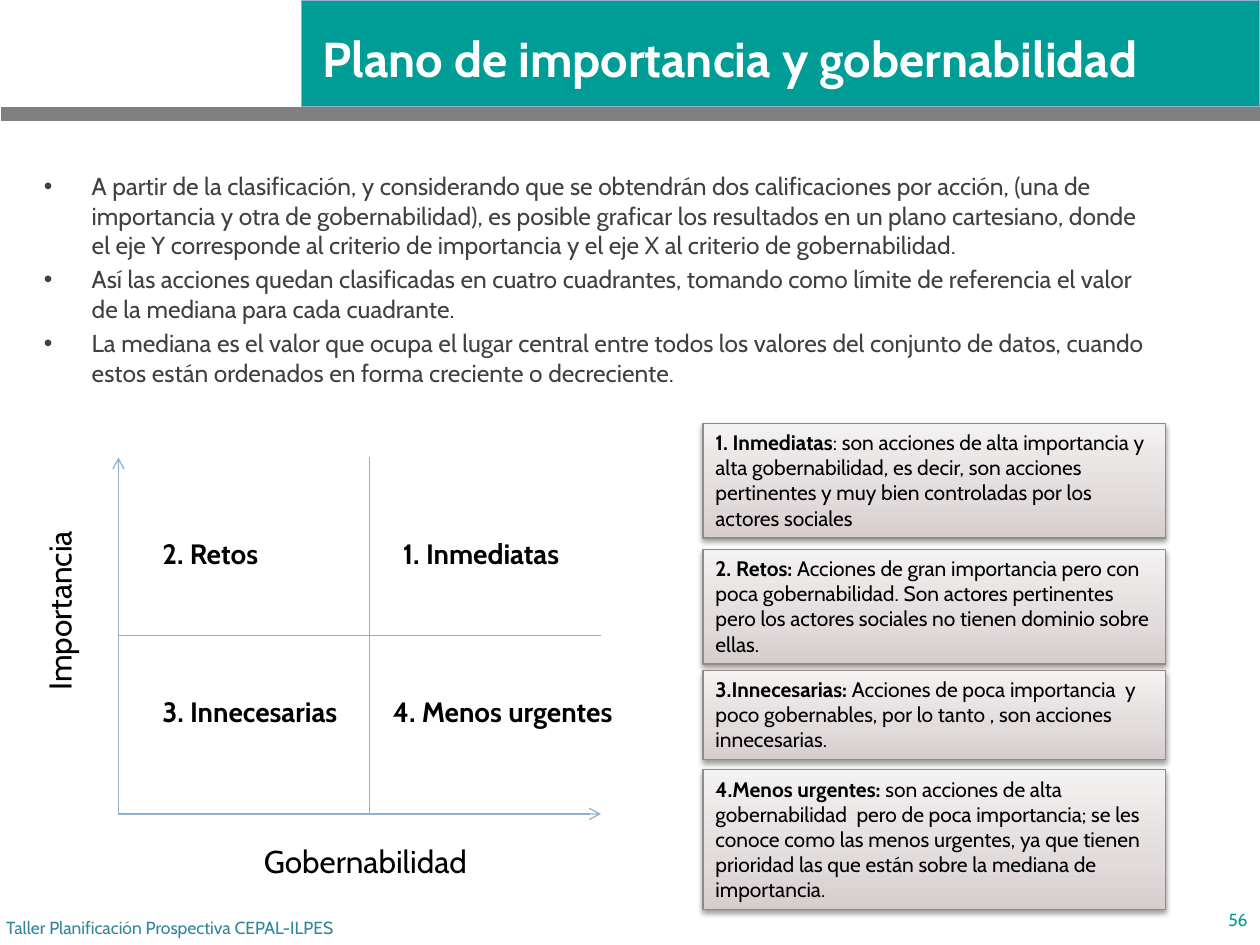
import pptx
import pptx.dml.color
import pptx.enum.shapes
import pptx.enum.text
import pptx.oxml
import pptx.oxml.ns
import pptx.util

COLUMNS, ROWS = 100, 75
TEAL, GREY, AXIS, BORDER = "009D96", "808080", "8FB2CF", "938989"
BLACK, WHITE, BODY, FOOTER = "000000", "FFFFFF", "404040", "31859C"
CARD_STOPS = [(0, "D6CDCD"), (35, "E2DBDB"), (100, "F4F1F1")]
ALIGN = pptx.enum.text.PP_ALIGN
MIDDLE = pptx.enum.text.MSO_ANCHOR.MIDDLE
RECTANGLE = pptx.enum.shapes.MSO_SHAPE.RECTANGLE
STRAIGHT = pptx.enum.shapes.MSO_CONNECTOR.STRAIGHT

presentation = pptx.Presentation()
presentation.slide_width = pptx.util.Inches(10)
presentation.slide_height = pptx.util.Inches(7.5)

BULLETS = [
    "A partir de la clasificación, y considerando que se obtendrán dos calificaciones por acción, "
    "(una de importancia y otra de gobernabilidad), es posible graficar los resultados en un plano "
    "cartesiano, donde el eje Y corresponde al criterio de importancia y el eje X al criterio de "
    "gobernabilidad.",
    "Así las acciones quedan clasificadas en cuatro cuadrantes, tomando como límite de referencia "
    "el valor de la mediana para cada cuadrante.",
    "La mediana es el valor que ocupa el lugar central entre todos los valores del conjunto de "
    "datos, cuando estos están ordenados en forma creciente o decreciente.",
]
QUADRANTS = [
    ("1. Inmediatas", 21.6, 5.8, 15),
    ("2. Retos", 2.5, 5.8, 11.7),
    ("3. Innecesarias", 2.5, 18.3, 16.7),
    ("4. Menos urgentes", 20.8, 18.3, 20),
]
CARDS = [
    (0, 4, "1. Inmediatas", ": son acciones de alta importancia y alta gobernabilidad, es decir, "
     "son acciones pertinentes y muy bien controladas por los actores sociales"),
    (10, 4, "2. Retos: ", "Acciones de gran importancia pero con poca gobernabilidad. Son actores "
     "pertinentes pero los actores sociales no tienen dominio sobre ellas."),
    (19.6, 3, "3.Innecesarias: ", "Acciones de poca importancia  y poco gobernables, por lo tanto , "
     "son acciones innecesarias."),
    (27.5, 5, "4.Menos urgentes: ", "son acciones de alta gobernabilidad  pero de poca importancia; "
     "se les conoce como las menos urgentes, ya que tienen prioridad las que están sobre la mediana "
     "de importancia."),
]


def place(left, top, width, height):
    """Turn a box in grid columns and rows into slide lengths."""
    column, row = presentation.slide_width / COLUMNS, presentation.slide_height / ROWS
    return [int(n) for n in (left * column, top * row, width * column, height * row)]


def color(value):
    """Turn a hex string into a colour."""
    return pptx.dml.color.RGBColor.from_string(value)


def xml(markup):
    """Build a drawing element from markup whose root has a %s for the namespace."""
    return pptx.oxml.parse_xml(markup % pptx.oxml.ns.nsdecls("a"))


def style(paragraph, size, ink, bold=False):
    """Format every run of a paragraph."""
    for run in paragraph.runs:
        run.font.name, run.font.size, run.font.bold = "Cabin", pptx.util.Pt(size), bold
        run.font.color.rgb = color(ink)


def add_text(slide, box, words, size, ink, bold=False, align=ALIGN.LEFT, anchor=None, wrap=True):
    """Add a one-paragraph text box and return its frame."""
    frame = slide.shapes.add_textbox(*place(*box)).text_frame
    frame.word_wrap, frame.text = wrap, words
    if anchor is not None:
        frame.vertical_anchor = anchor
    frame.paragraphs[0].alignment = align
    style(frame.paragraphs[0], size, ink, bold)
    return frame


def add_rectangle(slide, box, border=None):
    """Add a rectangle without shadow, with a thin border if one is given."""
    rectangle = slide.shapes.add_shape(RECTANGLE, *place(*box))
    rectangle.shadow.inherit = False
    if border:
        rectangle.line.color.rgb, rectangle.line.width = color(border), pptx.util.Pt(0.75)
    else:
        rectangle.line.fill.background()
    return rectangle


def add_header(slide, box):
    """Draw the title banner, the grey rule under it and the title."""
    left, top, width, height = box
    banner = add_rectangle(slide, (left + 23.9, top, width - 23.9, 8.5), AXIS)
    rule = add_rectangle(slide, (left + 0.1, top + 8.5, width, height - 8.5))
    for band, fill in ((banner, TEAL), (rule, GREY)):
        band.fill.solid()
        band.fill.fore_color.rgb = color(fill)
    title = slide.shapes.title
    title.left, title.top, title.width, title.height = place(left + 24.6, top - 0.4, 74.1, 10)
    frame = title.text_frame
    frame.text = "Plano de importancia y gobernabilidad"
    frame.auto_size = pptx.enum.text.MSO_AUTO_SIZE.NONE
    frame.vertical_anchor = MIDDLE
    frame.paragraphs[0].alignment = ALIGN.LEFT
    style(frame.paragraphs[0], 28, WHITE, True)
    slide.shapes._spTree.append(title._element)


def add_bullets(slide, box):
    """Write the bulleted explanation."""
    frame = slide.shapes.add_textbox(*place(*box)).text_frame
    frame.word_wrap, frame.text = True, "\n".join(BULLETS)
    indent = pptx.util.Inches(0.38)
    for index, paragraph in enumerate(frame.paragraphs):
        properties = paragraph._p.get_or_add_pPr()
        properties.set("marL", str(indent))
        properties.set("indent", str(-indent))
        properties.append(xml('<a:buFont %s typeface="Arial"/>'))
        properties.append(xml('<a:buChar %s char="•"/>'))
        paragraph.space_before = pptx.util.Pt(2.8 if index else 0)
        style(paragraph, 14, BODY)


def add_plane(slide, box):
    """Draw the axes, the median lines, the quadrant names and the axis names."""
    left, top, width, height = box
    right, bottom = left + width, top + height
    median_x, median_y = left + 0.52 * width, top + 0.5 * height
    lines = [
        (left, bottom, right, bottom, True),
        (left, bottom, left, top, True),
        (median_x, bottom, median_x, top, False),
        (left, median_y, right, median_y, False),
    ]
    axes = slide.shapes.add_group_shape()
    for *ends, arrow in lines:
        line = axes.shapes.add_connector(STRAIGHT, *place(*ends))
        line.line.color.rgb, line.line.width = color(AXIS), pptx.util.Pt(0.75)
        if arrow:
            line.line._get_or_add_ln().append(xml('<a:tailEnd %s type="arrow"/>'))
        line._element.spPr.append(xml("<a:effectLst %s/>"))
    for name, across, down, span in QUADRANTS:
        add_text(slide, (left + across, top + down, span, 3.7), name, 16, BLACK, True, wrap=False)
    vertical = add_text(slide, (left - 6.7, top + 3.3, 5, 16.2), "Importancia", 18, BLACK)
    vertical._txBody.bodyPr.set("vert", "vert270")
    add_text(slide, (left + 5, bottom + 1.7, 29.2, 4), "Gobernabilidad", 18, BLACK, align=ALIGN.CENTER)


def add_cards(slide, box):
    """Stack the shaded definitions, each as tall as its number of lines."""
    left, top, width, _ = box
    stops = "".join(f'<a:gs pos="{share * 1000}"><a:srgbClr val="{tint}"/></a:gs>'
                    for share, tint in CARD_STOPS)
    gradient = f'<a:gradFill %s><a:gsLst>{stops}</a:gsLst><a:lin ang="16200000" scaled="1"/></a:gradFill>'
    shadow = ('<a:outerShdw %s blurRad="39400" dist="20300" dir="5400000" rotWithShape="0">'
              '<a:srgbClr val="000000"><a:alpha val="38000"/></a:srgbClr></a:outerShdw>')
    for down, line_count, term, meaning in CARDS:
        card = add_rectangle(slide, (left, top + down, width, 2 * line_count + 1.1), BORDER)
        properties = card._element.spPr
        properties.find(pptx.oxml.ns.qn("a:prstGeom")).addnext(xml(gradient))
        properties.find(pptx.oxml.ns.qn("a:effectLst")).append(xml(shadow))
        frame = card.text_frame
        frame.word_wrap, frame.vertical_anchor = True, pptx.enum.text.MSO_ANCHOR.TOP
        paragraph = frame.paragraphs[0]
        paragraph.alignment = ALIGN.LEFT
        for words in (term, meaning):
            paragraph.add_run().text = words
        style(paragraph, 12, BLACK)
        paragraph.runs[0].font.bold = True


def add_footer(slide, box):
    """Write the workshop name and the page number."""
    left, top, width, height = box
    add_text(slide, (left - 0.5, top + 0.6, 59.8, height), "Taller Planificación Prospectiva CEPAL-ILPES",
             10, FOOTER, anchor=MIDDLE)
    add_text(slide, (left + width - 5, top, 5, height), "56", 10, TEAL, align=ALIGN.RIGHT, anchor=MIDDLE)


def main():
    """Build the slide and save it."""
    slide = presentation.slides.add_slide(presentation.slide_layouts.get_by_name("Title Only"))
    add_header(slide, (0, 0, COLUMNS, 9.6))
    add_bullets(slide, (2.5, 13.1, 90, 18.3))
    add_plane(slide, (9.4, 36.3, 38.3, 28.3))
    add_cards(slide, (55.8, 33.6, 36.7, 38.6))
    add_footer(slide, (0, 71, COLUMNS, 4))
    presentation.save("out.pptx")


if __name__ == "__main__":
    main()
